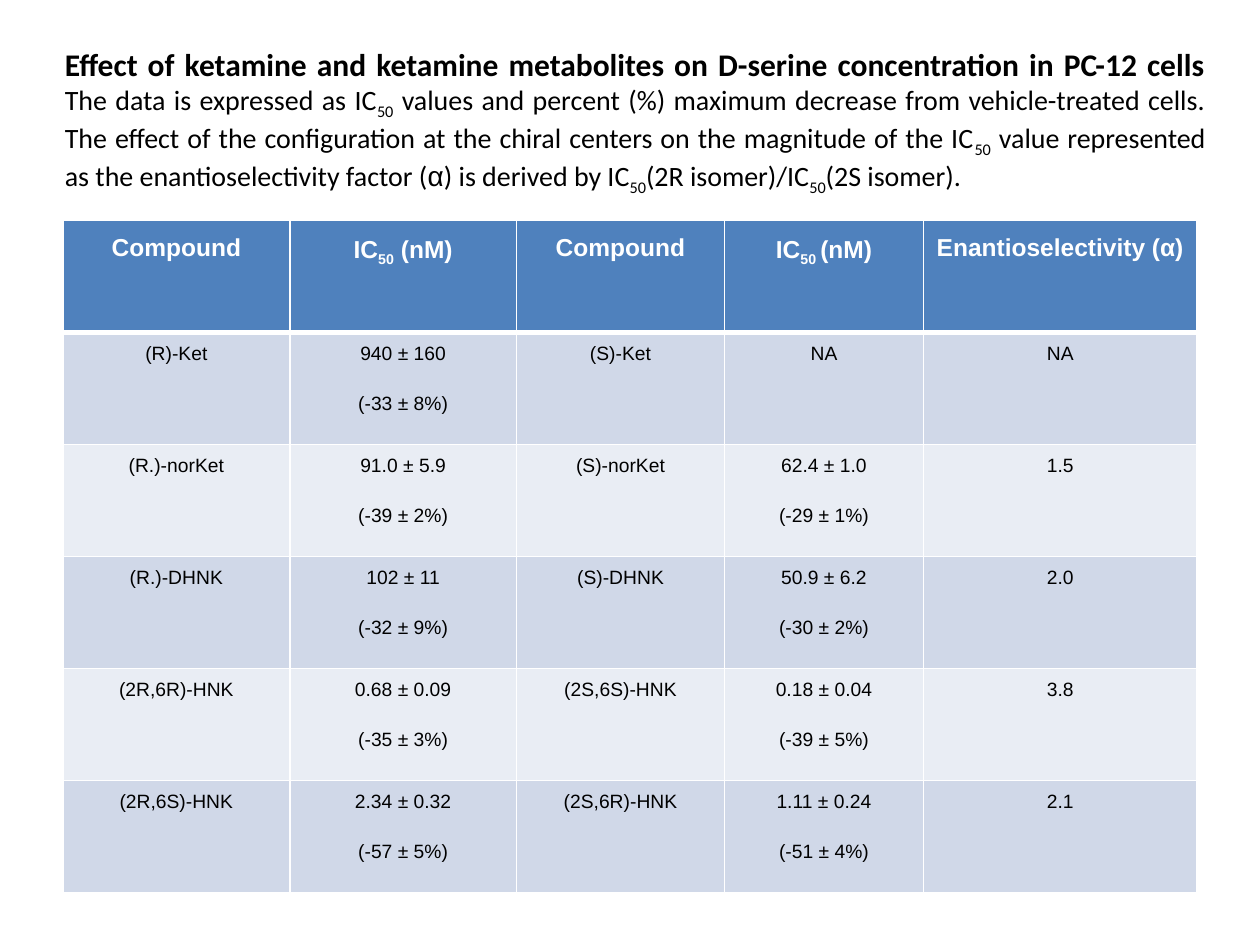
import pptx
import pptx.util
import pptx.dml.color
import pptx.enum.text
import pptx.oxml.ns
from lxml import etree

Pt = pptx.util.Pt
RGB = pptx.dml.color.RGBColor
ALIGN = pptx.enum.text.PP_ALIGN
ANCHOR = pptx.enum.text.MSO_ANCHOR

BLACK = RGB(0, 0, 0)
WHITE = RGB(255, 255, 255)
BLUE = RGB(0x4F, 0x81, 0xBD)
BANDS = [RGB(0xD0, 0xD8, 0xE8), RGB(0xE9, 0xED, 0xF4)]

# Text between two ~ marks is set as subscript.
TITLE = "Effect of ketamine and ketamine metabolites on D-serine concentration in PC-12 cells"
NOTE = [
    ("The data is expressed as IC~50~ values and percent (%) maximum decrease from "
     "vehicle-treated cells. The effect of the configuration at the chiral centers on "
     "the magnitude of the IC~50~ value represented as the enantioselectivity factor (",
     "Calibri"),
    ("α", "Arial"),
    (") is derived by IC~50~(2R isomer)/IC~50~(2S isomer). ", "Calibri"),
]
ROWS = [
    ["Compound", "IC~50~ (nM)", "Compound", "IC~50 ~(nM)", "Enantioselectivity (α)"],
    ["(R)-Ket", "940 ± 160\n(-33 ± 8%)", "(S)-Ket", "NA", "NA"],
    ["(R.)-norKet", "91.0 ± 5.9\n(-39 ± 2%)", "(S)-norKet", "62.4 ± 1.0\n(-29 ± 1%)", "1.5"],
    ["(R.)-DHNK", "102 ± 11\n(-32 ± 9%)", "(S)-DHNK", "50.9 ± 6.2\n(-30 ± 2%)", "2.0"],
    ["(2R,6R)-HNK", "0.68 ± 0.09\n(-35 ± 3%)", "(2S,6S)-HNK", "0.18 ± 0.04\n(-39 ± 5%)", "3.8"],
    ["(2R,6S)-HNK", "2.34 ± 0.32\n(-57 ± 5%)", "(2S,6R)-HNK", "1.11 ± 0.24\n(-51 ± 4%)", "2.1"],
]
WIDTHS = [129.6, 129.6, 118.8, 113.8, 156.2]
HEIGHT = 64


def write(para, text, size, face, color, bold=False):
    """Add runs to a paragraph, with every second ~ part as subscript."""
    for i, part in enumerate(text.split("~")):
        run = para.add_run()
        run.text = part
        font = run.font
        font.size, font.name, font.bold = Pt(size), face, bold
        font.color.rgb = color
        if i % 2:
            font._element.set("baseline", "-25000")


def edge(cell, side, width):
    qn = pptx.oxml.ns.qn
    props = cell._tc.get_or_add_tcPr()
    line = etree.SubElement(props, qn("a:ln" + side), w=str(Pt(width)))
    fill = etree.SubElement(line, qn("a:solidFill"))
    etree.SubElement(fill, qn("a:srgbClr"), val=str(WHITE))


def add_head(slide):
    box = slide.shapes.add_textbox(Pt(30), Pt(24), Pt(666), Pt(90))
    frame = box.text_frame
    frame.word_wrap = True
    frame.vertical_anchor = ANCHOR.MIDDLE
    para = frame.paragraphs[0]
    para.alignment = ALIGN.JUSTIFY
    write(para, TITLE, 18, "Calibri", BLACK, True)
    para.add_line_break()
    for text, face in NOTE:
        write(para, text, 16, face, BLACK)


def fill_cell(cell, text, row):
    head = row == 0
    cell.margin_left = cell.margin_right = Pt(5)
    cell.margin_top = cell.margin_bottom = 0
    for side in "LRTB":
        thick = (row, side) in [(0, "B"), (1, "T")]
        edge(cell, side, 3 if thick else 1)
    cell.fill.solid()
    cell.fill.fore_color.rgb = BLUE if head else BANDS[(row - 1) % 2]
    frame = cell.text_frame
    for i, line in enumerate(text.split("\n")):
        para = frame.add_paragraph() if i else frame.paragraphs[0]
        para.alignment = ALIGN.CENTER
        para.line_spacing = 1.5
        para.space_after = Pt(10)
        write(para, line, 14 if head else 11, "Arial", WHITE if head else BLACK, head)


def add_grid(slide):
    shape = slide.shapes.add_table(len(ROWS), len(WIDTHS), Pt(36), Pt(126),
                                   Pt(sum(WIDTHS)), Pt(HEIGHT * len(ROWS)))
    table = shape.table
    for col, width in zip(table.columns, WIDTHS):
        col.width = Pt(width)
    for r, texts in enumerate(ROWS):
        table.rows[r].height = Pt(HEIGHT)
        for c, text in enumerate(texts):
            fill_cell(table.cell(r, c), text, r)


def main():
    deck = pptx.Presentation()
    deck.slide_width, deck.slide_height = Pt(720), Pt(540)
    slide = deck.slides.add_slide(deck.slide_layouts[6])
    add_head(slide)
    add_grid(slide)
    deck.save("out.pptx")


if __name__ == "__main__":
    main()
